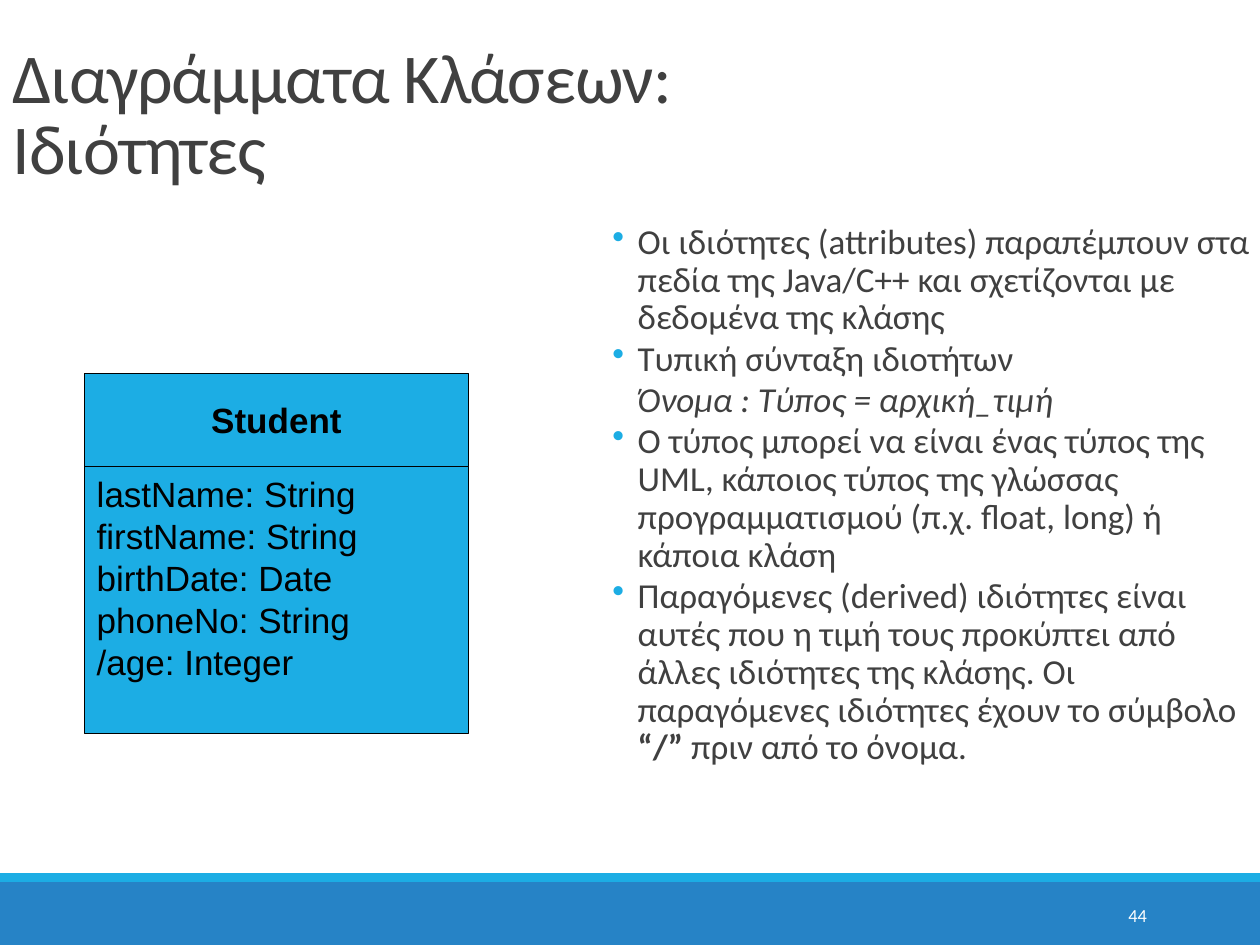
from dataclasses import dataclass

from lxml.etree import SubElement
from pptx import Presentation
from pptx.dml.color import RGBColor
from pptx.enum.shapes import MSO_SHAPE as Shape
from pptx.enum.text import MSO_ANCHOR as Anchor, PP_ALIGN as Align
from pptx.oxml.ns import qn
from pptx.util import Pt


def color(value):
    """Turn a hex string into a colour."""
    return RGBColor.from_string(value)


def add_text(para, text, *, size, font, ink, bold=False, italic=False, spacing=0):
    """Add formatted text to a paragraph, breaking lines at newlines."""
    for index, line in enumerate(text.split("\n")):
        if index:
            para.add_line_break()
        span = para.add_run()
        span.text = line
        span.font.size = Pt(size)
        span.font.name = font
        span.font.bold = bold
        span.font.italic = italic
        span.font.color.rgb = color(ink)
        if spacing:
            span.font._element.set("spc", str(round(spacing * 100)))


@dataclass
class SlideWriter:
    """Hold the style and the current slide."""

    page: object
    font: str = "Calibri"
    code_font: str = "Arial"
    ink: str = "404040"
    accent: str = "1CADE4"
    band: str = "2683C6"
    black: str = "000000"
    white: str = "FFFFFF"

    def text_box(self, left, top, width, height, anchor=Anchor.TOP, side=7.2):
        """Add an empty wrapping text box and return its frame."""
        box = self.page.shapes.add_textbox(Pt(left), Pt(top), Pt(width), Pt(height))
        frame = box.text_frame
        frame.word_wrap = True
        frame.vertical_anchor = anchor
        frame.margin_left = frame.margin_right = Pt(side)
        return frame

    def rectangle(self, left, top, width, height, fill, line=None):
        """Add a flat rectangle with an optional outline."""
        box = self.page.shapes.add_shape(
            Shape.RECTANGLE, Pt(left), Pt(top), Pt(width), Pt(height))
        box.shadow.inherit = False
        box.fill.solid()
        box.fill.fore_color.rgb = color(fill)
        if line:
            box.line.color.rgb = color(line)
            box.line.width = Pt(0.75)
        else:
            box.line.fill.background()
        return box

    def footer(self, number):
        """Add the footer bands and the page number."""
        self.rectangle(0, 504, 720, 36, self.band)
        self.rectangle(0, 499, 720, 5, self.accent)
        para = self.text_box(584.5, 508.5, 78, 28.5, Anchor.MIDDLE).paragraphs[0]
        para.alignment = Align.RIGHT
        add_text(para, number, size=10.5, font=self.font, ink=self.white)

    def title(self, text):
        """Add the slide title."""
        para = self.text_box(0, 21.6, 648, 90, Anchor.BOTTOM).paragraphs[0]
        para.line_spacing = 0.85
        add_text(para, text, size=40, font=self.font, ink=self.ink, spacing=-0.5)

    def bullet_list(self, items):
        """Add the body list from pairs of a bullet flag and text pieces."""
        frame = self.text_box(350, 124.5, 370, 400, side=0)
        indent = Pt(14.4)
        for index, (bulleted, pieces) in enumerate(items):
            para = frame.add_paragraph() if index else frame.paragraphs[0]
            para.line_spacing = 0.9
            para.space_after = Pt(2)
            properties = para._p.get_or_add_pPr()
            properties.set("marL", str(indent))
            properties.set("indent", str(-indent if bulleted else 0))
            if bulleted:
                paint = SubElement(properties, qn("a:buClr"))
                SubElement(paint, qn("a:srgbClr")).set("val", self.accent)
                SubElement(properties, qn("a:buChar")).set("char", "•")
            for text, style in pieces:
                add_text(para, text, size=20, font=self.font, ink=self.ink, **style)

    def compartment(self, top, height, lines, anchor, align, bold=False):
        """Add one compartment of the class box."""
        box = self.rectangle(48.2, top, 219.6, height, self.accent, self.black)
        frame = box.text_frame
        frame.word_wrap = True
        frame.vertical_anchor = anchor
        for index, line in enumerate(lines):
            para = frame.add_paragraph() if index else frame.paragraphs[0]
            para.alignment = align
            add_text(para, line, size=20, font=self.code_font, ink=self.black, bold=bold)

    def class_box(self, name, attributes):
        """Add a class diagram box with a name and attributes."""
        top, name_height = 213.3, 53.1
        self.compartment(top, name_height, [name], Anchor.MIDDLE, Align.CENTER, bold=True)
        self.compartment(top + name_height, 152.6, attributes, Anchor.TOP, Align.LEFT)


def main():
    """Build and save the deck."""
    deck = Presentation()
    deck.slide_width, deck.slide_height = Pt(720), Pt(540)
    writer = SlideWriter(deck.slides.add_slide(deck.slide_layouts[6]))
    writer.footer("44")
    writer.title("Διαγράμματα Κλάσεων:\nΙδιότητες")
    writer.bullet_list([
        (True, [("Οι ιδιότητες (attributes) παραπέμπουν στα πεδία της Java/C++ "
                 "και σχετίζονται με δεδομένα της κλάσης", {})]),
        (True, [("Τυπική σύνταξη ιδιοτήτων", {})]),
        (False, [("Όνομα : Τύπος = αρχική_τιμή", {"italic": True})]),
        (True, [("Ο τύπος μπορεί να είναι ένας τύπος της UML, κάποιος τύπος της "
                 "γλώσσας προγραμματισμού (π.χ. float, long) ή κάποια κλάση", {})]),
        (True, [("Παραγόμενες (derived) ιδιότητες είναι αυτές που η τιμή τους "
                 "προκύπτει από άλλες ιδιότητες της κλάσης. Οι παραγόμενες "
                 "ιδιότητες έχουν το σύμβολο ", {}),
                ("“/”", {"bold": True}),
                (" πριν από το όνομα.", {})]),
    ])
    writer.class_box("Student", [
        "lastName: String", "firstName: String", "birthDate: Date",
        "phoneNo: String", "/age: Integer"])
    deck.save("out.pptx")


if __name__ == "__main__":
    main()
